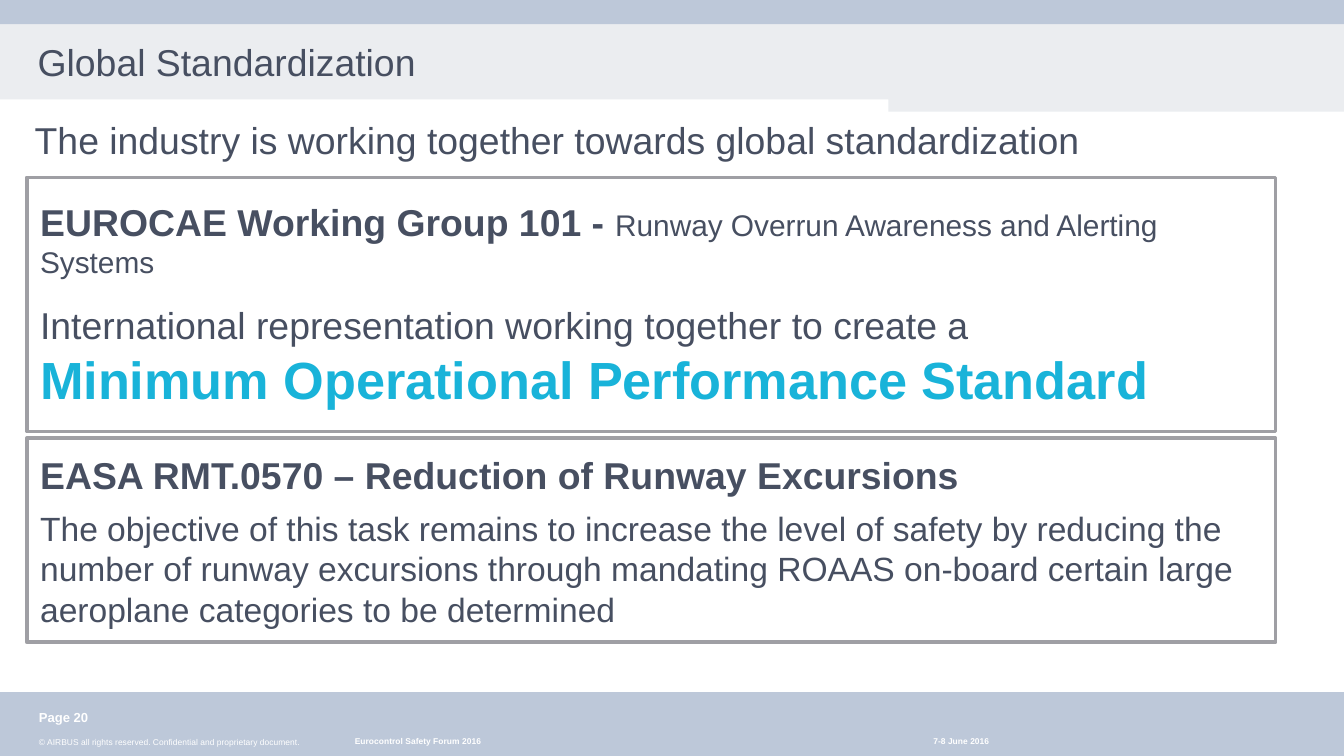
from pptx import Presentation
from pptx import util as u
from pptx.dml import color
from pptx.enum import shapes, text

COLORS = {
    "band": "BDC8D9",
    "header": "EBEDF0",
    "white": "FFFFFF",
    "border": "9F9FA4",
    "ink": "474F61",
    "accent": "19B3D9",
}
FONT = "Arial"
LEFT, MIDDLE, TOP = text.PP_ALIGN.LEFT, text.MSO_ANCHOR.MIDDLE, text.MSO_ANCHOR.TOP


def rgb(name):
    return color.RGBColor.from_string(COLORS[name])


class SlideBuilder:
    def __init__(self, slide):
        self.slide = slide

    def paint(self, shape, fill, line=None):
        shape.shadow.inherit = False
        shape.fill.solid()
        shape.fill.fore_color.rgb = rgb(fill)
        if line:
            shape.line.color.rgb = rgb(line)
            shape.line.width = u.Pt(2)
        else:
            shape.line.fill.background()

    def frame(self, shape, insets, anchor):
        frame = shape.text_frame
        frame.word_wrap = True
        frame.auto_size = text.MSO_AUTO_SIZE.NONE
        frame.vertical_anchor = anchor
        frame.margin_left, frame.margin_top, frame.margin_right, frame.margin_bottom = map(u.Inches, insets)
        return frame

    def run(self, paragraph, words, size, ink="ink", bold=False):
        run = paragraph.add_run()
        run.text = words
        run.font.name = FONT
        run.font.size = u.Pt(size)
        run.font.bold = bold
        run.font.color.rgb = rgb(ink)

    def rectangle(self, left, top, width, height, fill, line=None):
        shape = self.slide.shapes.add_shape(
            shapes.MSO_SHAPE.RECTANGLE, *map(u.Inches, (left, top, width, height)))
        self.paint(shape, fill, line)
        return shape

    def outline(self, points, fill):
        start, *rest = [(u.Inches(x), u.Inches(y)) for x, y in points]
        builder = self.slide.shapes.build_freeform(*start)
        builder.add_line_segments(rest, close=True)
        self.paint(builder.convert_to_shape(), fill)

    def panel(self, top, height, paragraphs, space_after=0):
        shape = self.rectangle(0.2, top, 9.29, height, "white", "border")
        frame = self.frame(shape, (0.1, 0.05, 0.1, 0.05), MIDDLE)
        for index, runs in enumerate(paragraphs):
            paragraph = frame.paragraphs[0] if index == 0 else frame.add_paragraph()
            paragraph.alignment = LEFT
            paragraph.space_before = u.Pt(6 if index else 0)
            paragraph.space_after = u.Pt(space_after)
            for run in runs:
                if run is None:
                    paragraph.add_line_break()
                else:
                    self.run(paragraph, *run)

    def label(self, left, top, width, height, words, size, ink="white", bold=False,
              insets=(0, 0, 0, 0), align=LEFT, anchor=TOP):
        box = self.slide.shapes.add_textbox(*map(u.Inches, (left, top, width, height)))
        paragraph = self.frame(box, insets, anchor).paragraphs[0]
        paragraph.alignment = align
        self.run(paragraph, words, size, ink, bold)

    def title(self, left, top, width, height, words):
        title = self.slide.shapes.title
        title.left, title.top, title.width, title.height = map(u.Inches, (left, top, width, height))
        paragraph = self.frame(title, (0, 0, 0, 0), MIDDLE).paragraphs[0]
        paragraph.alignment = LEFT
        paragraph.line_spacing = 0.8
        self.run(paragraph, words, 20)
        title.element.getparent().append(title.element)


def main():
    presentation = Presentation()
    presentation.slide_width = u.Inches(10)
    presentation.slide_height = u.Inches(10 * 9 / 16)
    builder = SlideBuilder(presentation.slides.add_slide(presentation.slide_layouts[5]))

    builder.outline([(0, 0.18), (10, 0.18), (10, 0.83), (6.61, 0.83), (6.61, 0.74), (0, 0.74)], "header")
    builder.rectangle(0, 5.15, 10, 0.48, "band")
    builder.rectangle(0, 0, 10, 0.18, "band")
    builder.label(0.29, 5.48, 2.36, 0.13,
                  "© AIRBUS all rights reserved. Confidential and proprietary document.",
                  4.5, insets=(0, 0, 0.1, 0.05), anchor=MIDDLE)

    builder.panel(3.26, 1.52, [
        [("EASA RMT.0570 – Reduction of Runway Excursions", 20, "ink", True)],
        [("The objective of this task remains to increase the level of safety by reducing the "
          "number of runway excursions through mandating ROAAS on-board certain large "
          "aeroplane categories to be determined", 18)],
    ])
    builder.panel(1.32, 1.89, [
        [("EUROCAE Working Group 101 - ", 20, "ink", True),
         ("Runway Overrun Awareness and Alerting Systems", 16)],
        [("International representation working together to create a ", 20), None,
         ("Minimum Operational Performance Standard", 28, "accent", True)],
    ], space_after=6)

    builder.label(6.57, 5.48, 0.79, 0.13, "7-8 June 2016", 4.5, bold=True, align=text.PP_ALIGN.RIGHT)
    builder.label(2.64, 5.48, 3.94, 0.13, "Eurocontrol Safety Forum 2016", 4.5, bold=True)
    builder.label(0.29, 5.23, 1.18, 0.18, "Page 20", 7, bold=True, insets=(0, 0.05, 0, 0.05))
    builder.title(0.28, 0.24, 9.44, 0.5, "Global Standardization")
    builder.label(0.16, 0.82, 9.27, 0.44,
                  "The industry is working together towards global standardization",
                  20, "ink", insets=(0.1, 0.05, 0.1, 0.05), anchor=MIDDLE)
    presentation.save("out.pptx")


if __name__ == "__main__":
    main()
